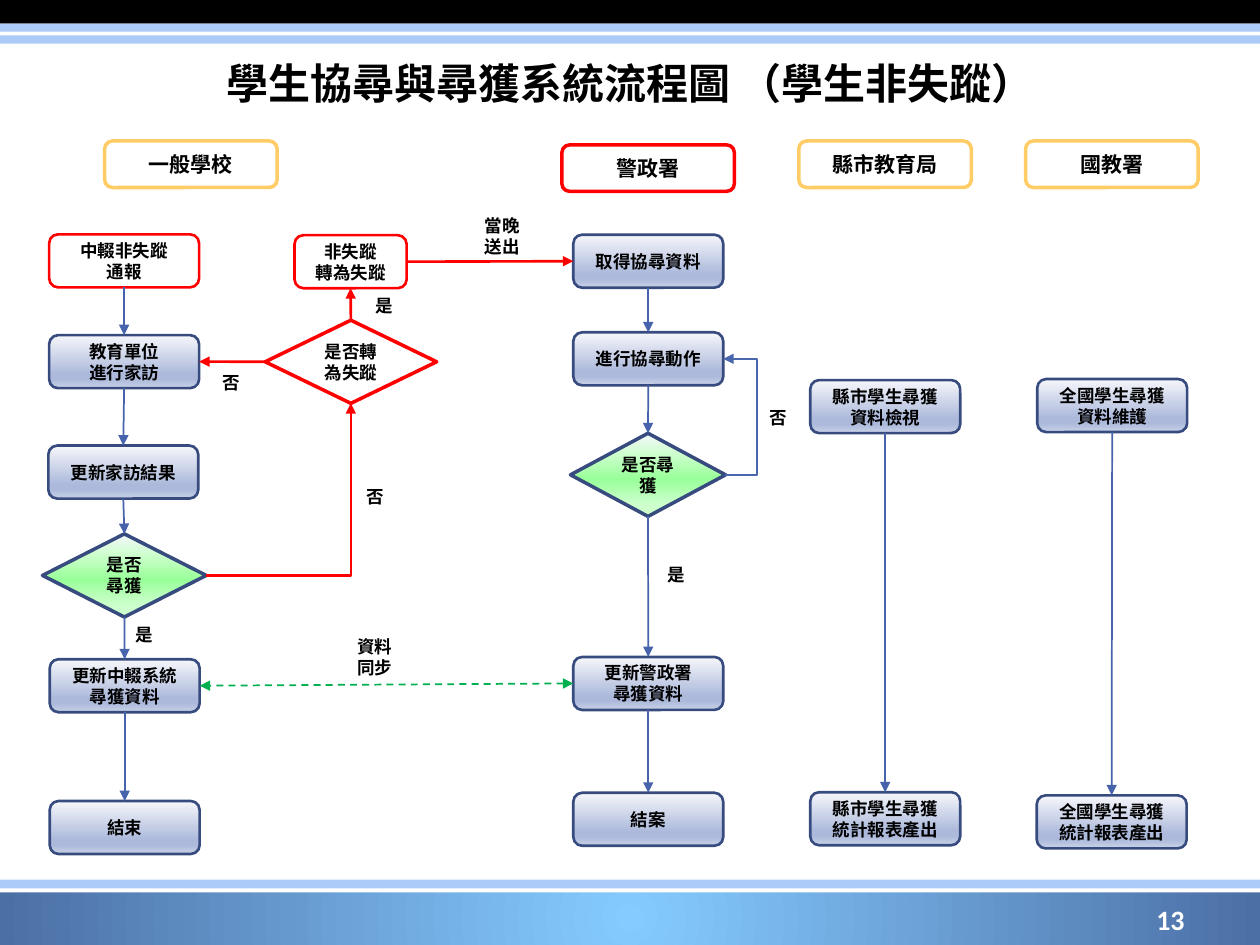
from dataclasses import dataclass

from lxml import etree
from pptx import Presentation
from pptx.dml.color import RGBColor
from pptx.enum.dml import MSO_LINE
from pptx.enum.shapes import MSO_CONNECTOR, MSO_SHAPE
from pptx.enum.text import MSO_ANCHOR, PP_ALIGN
from pptx.oxml.ns import qn
from pptx.util import Pt

RECT, ROUND = MSO_SHAPE.RECTANGLE, MSO_SHAPE.ROUNDED_RECTANGLE
DIAMOND = MSO_SHAPE.FLOWCHART_DECISION
STRAIGHT, ELBOW = MSO_CONNECTOR.STRAIGHT, MSO_CONNECTOR.ELBOW
MIDDLE, CENTER, RIGHT = MSO_ANCHOR.MIDDLE, PP_ALIGN.CENTER, PP_ALIGN.RIGHT
DASH = MSO_LINE.DASH
TOP, LEFT, BOTTOM, EAST = range(4)  # connection sites

CJK = "Noto Sans CJK SC"
BLACK, WHITE, RED, NAVY = "000000", "FFFFFF", "FF0000", "374B7F"
GOLD, BLUE, STEEL, GREEN, SKY = "FFCC66", "4663AB", "4A66AC", "00B050", "ACCBF9"
BOX_FILL = [(0, "F6F7FB"), (74, "ACB9DB"), (83, "ACB9DB"), (100, "C8D1E7")]
TEST_FILL = [(0, "F6F7FB"), (26, "CCFFCC"), (55, "99FF99"), (85, "CCFFCC")]
BAR_FILL = [(0, "85CBFF"), (100, "4C70A6")]

WIDE, HIGH = 85.7, 30.3
SCHOOL, POLICE, COUNTY, NATION = 28.1, 327.6, 463, 592.7


@dataclass
class Node:
    key: str
    text: str
    x: float
    y: float
    w: float = WIDE
    h: float = HIGH
    kind: int = ROUND
    fill: object = None
    line: str = NAVY
    weight: float = 1.5
    size: float = 10


@dataclass
class Link:
    start: str
    end: str
    out: int = BOTTOM
    into: int = TOP
    color: str = BLUE
    weight: float = 1
    kind: int = STRAIGHT


@dataclass
class Label:
    text: str
    x: float
    y: float
    w: float = 17.3
    h: float = 19.4


def box(key: str, text: str, x: float, y: float) -> Node:
    return Node(key, text, x, y, fill=BOX_FILL)


def head(text: str, x: float, y: float = 80.6, line: str = GOLD) -> Node:
    return Node(text, text, x, y, 98.6, 26.6, line=line, weight=2, size=12)


def test(key: str, text: str, x: float, y: float, w: float,
         fill: object = TEST_FILL, line: str = NAVY) -> Node:
    return Node(key, text, x, y, w, 47.5, DIAMOND, fill, line, 2)


NODES = [
    head("一般學校", 59.8), head("警政署", 321.1, 82.8, RED),
    head("縣市教育局", 456.5), head("國教署", 586.1),
    Node("report", "中輟非失蹤\n通報", SCHOOL, 133.9, fill=WHITE, line=RED),
    box("visit", "教育單位\n進行家訪", SCHOOL, 191.5),
    box("result", "更新家訪結果", SCHOOL - 0.5, 254.6),
    test("found", "是否\n尋獲", 24.3, 305.1, 93.6),
    box("update", "更新中輟系統\n尋獲資料", SCHOOL + 0.3, 376.7),
    box("end", "結束", SCHOOL + 0.3, 457.7),
    Node("turn", "非失蹤\n轉為失蹤", 168.3, 134.4, 64.1, fill=WHITE, line=RED),
    test("missing", "是否轉為失蹤", 151.5, 183, 98, WHITE, RED),
    box("obtain", "取得協尋資料", POLICE, 134.1),
    box("search", "進行協尋動作", POLICE, 189.9),
    test("caught", "是否尋獲", 326, 247.6, 88.6),
    box("police", "更新警政署\n尋獲資料", POLICE, 375.4),
    box("close", "結案", POLICE, 453),
    box("view", "縣市學生尋獲資料檢視", COUNTY, 217.2),
    box("count", "縣市學生尋獲統計報表產出", COUNTY, 452.7),
    box("keep", "全國學生尋獲資料維護", NATION, 216.6),
    box("total", "全國學生尋獲統計報表產出", NATION - 0.3, 454.5),
]
FLOWS = [
    ("report", "visit", "result", "found", "update", "end"),
    ("obtain", "search", "caught", "police", "close"),
    ("view", "count"), ("keep", "total"),
]
LINKS = [Link(a, b) for flow in FLOWS for a, b in zip(flow, flow[1:])] + [
    Link("turn", "obtain", EAST, LEFT, RED, 1.5),
    Link("missing", "visit", LEFT, EAST, RED, 1.5),
    Link("missing", "turn", TOP, BOTTOM, RED, 1.5),
]
LABELS = [
    Label("是", 70.6, 352.8), Label("否", 432.7, 229), Label("是", 374.4, 319),
    Label("否", 202.3, 274.3), Label("是", 207.4, 164.9), Label("否", 120.2, 208.8),
    Label("資料同步", 195.1, 360, 38.2, 31.7), Label("當晚送出", 266.4, 119.5, 41, 31.7),
]


def rgb(code: str) -> RGBColor:
    return RGBColor.from_string(code)


def paint(shape, fill) -> None:
    """Fill with nothing, a hex colour or a list of gradient stops."""
    if fill is None:
        shape.fill.background()
    elif isinstance(fill, str):
        shape.fill.solid()
        shape.fill.fore_color.rgb = rgb(fill)
    else:
        shape.fill.gradient()
        grad = shape._element.spPr.find(qn("a:gradFill"))
        for child in list(grad):
            grad.remove(child)
        stops = etree.SubElement(grad, qn("a:gsLst"))
        for pos, code in fill:
            stop = etree.SubElement(stops, qn("a:gs"), pos=str(pos * 1000))
            etree.SubElement(stop, qn("a:srgbClr"), val=code)
        if fill is BAR_FILL:
            way = etree.SubElement(grad, qn("a:path"), path="circle")
            etree.SubElement(way, qn("a:fillToRect"), l="50000", t="50000",
                             r="50000", b="50000")
        else:
            etree.SubElement(grad, qn("a:lin"), ang="5400000", scaled="0")


def write(shape, text: str, size: float, face: str = CJK, color: str = BLACK,
          align: int = CENTER, anchor: int = MIDDLE) -> None:
    frame = shape.text_frame
    frame.word_wrap, frame.vertical_anchor = True, anchor
    frame.text = text
    for para in frame.paragraphs:
        para.alignment = align
        font = para.font
        font.size, font.bold, font.name = Pt(size), True, face
        font.color.rgb = rgb(color)
        if face == CJK:
            latin = font._rPr.find(qn("a:latin"))
            latin.addnext(etree.Element(qn("a:ea"), typeface=face))


def band(shapes, y: float, h: float, fill) -> None:
    shape = shapes.add_shape(RECT, 0, Pt(y), Pt(720), Pt(h))
    shape.shadow.inherit = False
    shape.line.fill.background()
    paint(shape, fill)


def draw(shapes, node: Node):
    shape = shapes.add_shape(node.kind, Pt(node.x), Pt(node.y), Pt(node.w), Pt(node.h))
    shape.shadow.inherit = False
    paint(shape, node.fill)
    shape.line.color.rgb, shape.line.width = rgb(node.line), Pt(node.weight)
    write(shape, node.text, node.size)
    return shape


def join(shapes, made: dict, link: Link, ends: tuple = ("tailEnd",), dash=None):
    line = shapes.add_connector(link.kind, 0, 0, 0, 0)
    line.begin_connect(made[link.start], link.out)
    line.end_connect(made[link.end], link.into)
    line.line.color.rgb, line.line.width = rgb(link.color), Pt(link.weight)
    if dash:
        line.line.dash_style = dash
    props = line._element.spPr
    for end in ends:
        etree.SubElement(props.find(qn("a:ln")), qn("a:" + end), type="triangle")
    etree.SubElement(props, qn("a:effectLst"))
    return line


def bend(line, kind: str, adj: int | None = None) -> None:
    """Choose the elbow preset and where its middle leg runs."""
    geom = line._element.spPr.find(qn("a:prstGeom"))
    geom.set("prst", kind)
    if adj is not None:
        guides = geom.find(qn("a:avLst"))
        etree.SubElement(guides, qn("a:gd"), name="adj1", fmla=f"val {adj}")


def main() -> None:
    deck = Presentation()
    deck.slide_width, deck.slide_height = Pt(720), Pt(540)
    slide = deck.slides.add_slide(deck.slide_layouts[5])
    shapes = slide.shapes
    for y, h, fill in [(0, 13.5, BLACK), (13.5, 11.5, SKY), (18, 2.3, WHITE),
                       (509, 31, BAR_FILL), (502.6, 7, SKY), (507.6, 2.3, WHITE)]:
        band(shapes, y, h, fill)

    title = shapes.title
    title.left, title.top, title.width, title.height = Pt(36), Pt(21.6), Pt(648), Pt(51)
    write(title, "學生協尋與尋獲系統流程圖 （學生非失蹤）", 24)
    number = shapes.add_textbox(Pt(586), Pt(511.2), Pt(98), Pt(28.8))
    write(number, "13", 16, "Calibri", WHITE, RIGHT)

    made = {node.key: draw(shapes, node) for node in NODES}
    for link in LINKS:
        join(shapes, made, link)
    join(shapes, made, Link("police", "update", LEFT, EAST, GREEN),
         ("headEnd", "tailEnd"), DASH)
    turn = join(shapes, made, Link("found", "missing", EAST, BOTTOM, RED, 1.25, ELBOW))
    bend(turn, "bentConnector2")
    back = join(shapes, made, Link("caught", "search", EAST, EAST, STEEL, 1.25, ELBOW))
    bend(back, "bentConnector3", round(-Pt(18) / back.width * 100000))

    for label in LABELS:
        area = shapes.add_textbox(Pt(label.x), Pt(label.y), Pt(label.w), Pt(label.h))
        write(area, label.text, 10, "Arial", anchor=MSO_ANCHOR.TOP)
    deck.save("out.pptx")


if __name__ == "__main__":
    main()
